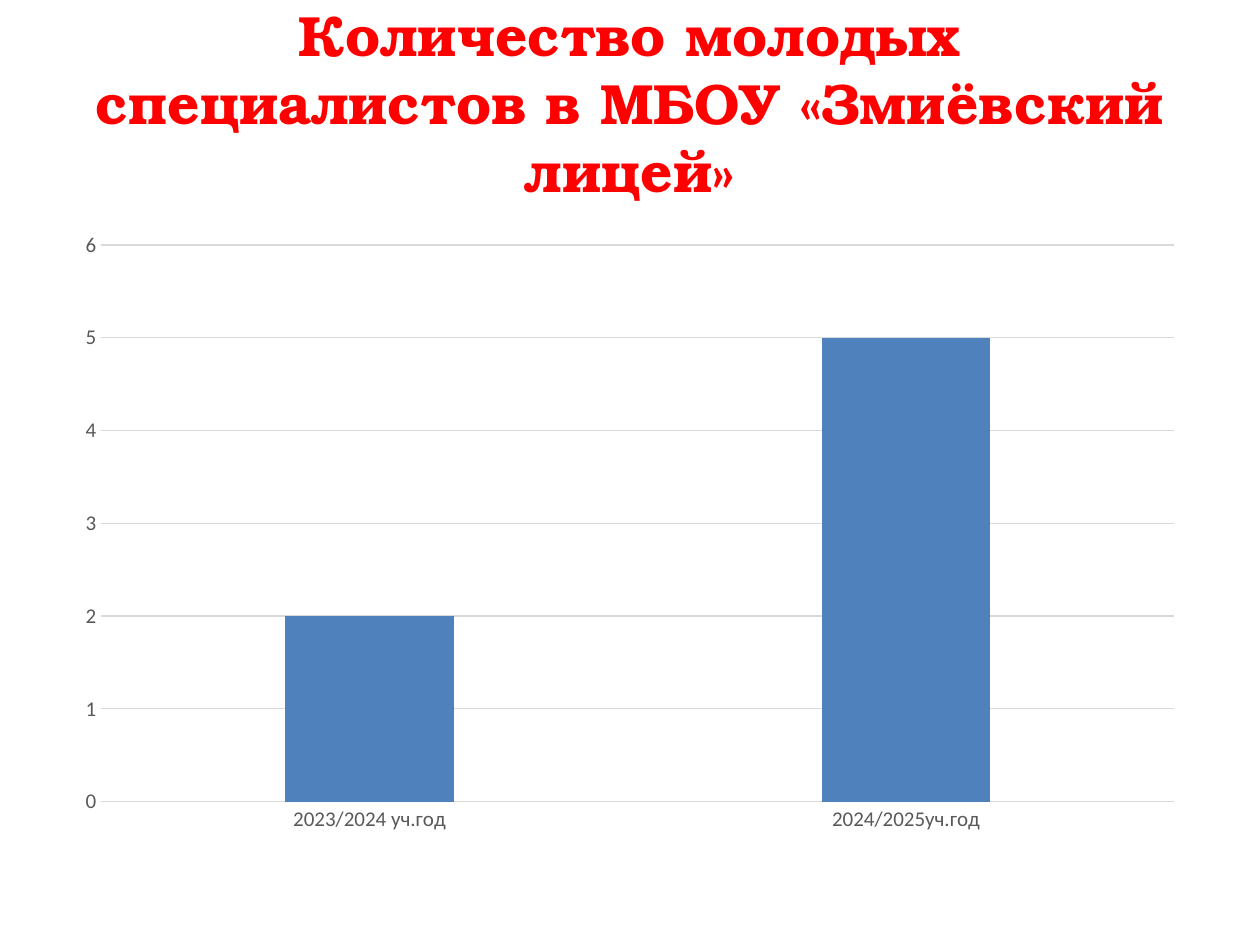
from dataclasses import dataclass

from pptx import Presentation
from pptx.chart.data import CategoryChartData
from pptx.dml.color import RGBColor
from pptx.enum.chart import XL_CHART_TYPE, XL_TICK_MARK
from pptx.enum.dml import MSO_FILL
from pptx.enum.text import MSO_ANCHOR, PP_ALIGN
from pptx.util import Emu, Pt

COLUMNS = XL_CHART_TYPE.COLUMN_CLUSTERED
NO_TICKS = XL_TICK_MARK.NONE
MIDDLE = MSO_ANCHOR.MIDDLE
CENTER = PP_ALIGN.CENTER
PX_PER_INCH = 126


@dataclass(frozen=True)
class Theme:
    title_font: str = "TeX Gyre Bonum"
    chart_font: str = "Calibri"
    title_size: float = 32.4
    axis_size: float = 12
    line_width: float = 0.75
    title: str = "FF0000"
    bar: str = "4F81BD"
    axis_text: str = "595959"
    grid: str = "D9D9D9"


THEME = Theme()


def px(n):
    return Emu(round(n * 914400 / PX_PER_INCH))


def rgb(code):
    return RGBColor.from_string(code)


def set_font(font, name, size, color, bold=False):
    font.name, font.size, font.bold = name, Pt(size), bold
    font.color.rgb = rgb(color)


def add_text(slide, box, text, *, font, size, color, bold=False, align=CENTER, anchor=MIDDLE):
    tf = slide.shapes.add_textbox(*map(px, box)).text_frame
    tf.word_wrap = True
    tf.vertical_anchor = anchor
    p = tf.paragraphs[0]
    p.alignment = align
    r = p.add_run()
    r.text = text
    set_font(r.font, font, size, color, bold)


def set_line(line):
    line.color.rgb = rgb(THEME.grid)
    line.width = Pt(THEME.line_width)


def add_title(slide, box):
    add_text(slide, box, "Количество молодых специалистов в МБОУ «Змиёвский лицей»",
             font=THEME.title_font, size=THEME.title_size, color=THEME.title, bold=True)


def add_specialists_chart(slide, box):
    data = CategoryChartData()
    data.categories = ["2023/2024 уч.год", "2024/2025уч.год"]
    data.add_series("Series 1", [2, 5])
    chart = slide.shapes.add_chart(COLUMNS, *map(px, box), data).chart
    chart.has_legend = False
    chart.has_title = False
    set_font(chart.font, THEME.chart_font, THEME.axis_size, THEME.axis_text)

    plot = chart.plots[0]
    plot.gap_width, plot.overlap = 219, -27
    plot.vary_by_categories = False
    bars = plot.series[0]
    bars.format.fill.solid()
    bars.format.fill.fore_color.rgb = rgb(THEME.bar)

    for axis in (chart.category_axis, chart.value_axis):
        axis.major_tick_mark = axis.minor_tick_mark = NO_TICKS
        set_font(axis.tick_labels.font, THEME.chart_font, THEME.axis_size, THEME.axis_text)
    set_line(chart.category_axis.format.line)

    values = chart.value_axis
    values.minimum_scale, values.maximum_scale, values.major_unit = 0, 6, 1
    values.format.line.fill.background()
    set_line(values.major_gridlines.format.line)


def main():
    prs = Presentation()
    prs.slide_width, prs.slide_height = px(1260), px(945)
    slide = prs.slides.add_slide(prs.slide_layouts[6])
    add_title(slide, (63, 23, 1134, 158))
    add_specialists_chart(slide, (63, 220, 1134, 624))
    prs.save("out.pptx")


if __name__ == "__main__":
    main()
